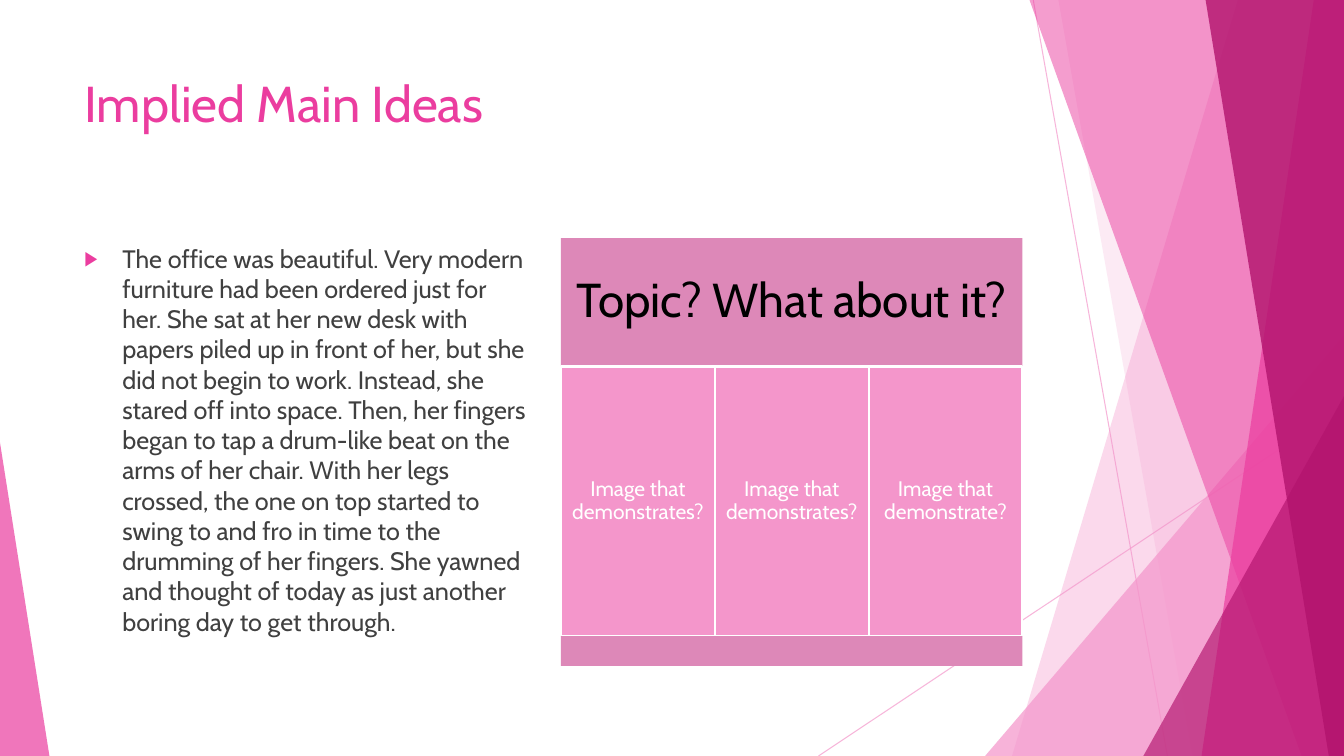
"""Build the slide on implied main ideas: a passage beside a topic-and-images table of boxes."""
import pptx
import pptx.util
import pptx.dml.color
import pptx.enum.shapes
import pptx.enum.text
import pptx.oxml
import pptx.oxml.ns
import lxml.etree

PINK, MAGENTA, PLUM, MAUVE = "F496CB", "EB3D9F", "B2136D", "DD88B8"
WHITE, BLACK, GREY = "FFFFFF", "000000", "404040"
FACE = "Cabin"
SHAPE = pptx.enum.shapes.MSO_SHAPE
ALIGN = pptx.enum.text.PP_ALIGN
ANCHOR = pptx.enum.text.MSO_ANCHOR
Pt = pptx.util.Pt
qn = pptx.oxml.ns.qn


def paint(fill, colour, opacity=100):
    fill.solid()
    fill.fore_color.rgb = pptx.dml.color.RGBColor.from_string(colour)
    if opacity < 100:
        tint = fill._xPr.find(qn("a:solidFill"))[0]
        lxml.etree.SubElement(tint, qn("a:alpha")).set("val", str(opacity * 1000))


def write(frame, text, size, colour, align=ALIGN.LEFT, anchor=ANCHOR.TOP,
          inset=(7.2, 3.6), spacing=None, before=None):
    frame.word_wrap = True
    frame.vertical_anchor = anchor
    frame.margin_left = frame.margin_right = Pt(inset[0])
    frame.margin_top = frame.margin_bottom = Pt(inset[1])
    paragraph = frame.paragraphs[0]
    paragraph.alignment = align
    paragraph.line_spacing = spacing
    if before is not None:
        paragraph.space_before = Pt(before)
    run = paragraph.add_run()
    run.text = text
    run.font.name = FACE
    run.font.size = Pt(size)
    paint(run.font.fill, colour)
    return paragraph


deck = pptx.Presentation()
deck.slide_width = pptx.util.Inches(13.33)
deck.slide_height = pptx.util.Inches(7.5)
slide = deck.slides.add_slide(deck.slide_layouts[6])
shapes = slide.shapes
col, row = deck.slide_width / 100, deck.slide_height / 100

for x1, y1, x2, y2 in [(76.88, 0, 86.86, 100), (100, 53.73, 60.9, 100)]:
    ray = shapes.add_connector(pptx.enum.shapes.MSO_CONNECTOR.STRAIGHT,
                               int(x1 * col), int(y1 * row), int(x2 * col), int(y2 * row))
    ray.line.width = Pt(0.75)
    paint(ray.line.fill, PINK, 70)
    lxml.etree.SubElement(ray._element.spPr, qn("a:effectLst"))

facets = [
    ("band", (92.1, 75.3), PINK, 36),
    ("band", (78.75, 88.73), PINK, 20),
    ("triangle", (73.3, 100, 44.4, 1), PINK, 72),
    ("band", (76.6, 96.85), MAGENTA, 50),
    ("band", (97.75, 89.4), MAGENTA, 70),
    ("band", (89.7, 98.87), PLUM, 80),
    ("triangle", (85.07, 100, 52.4, 1), PLUM, 66),
    ("triangle", (0, 3.68, 58.53, 0), MAGENTA, 70),
]
for kind, edges, colour, opacity in facets:
    if kind == "band":
        upper, lower = edges
        outline = shapes.build_freeform(int(upper * col), 0)
        outline.add_line_segments([(int(100 * col), 0), (int(100 * col), int(100 * row)),
                                   (int(lower * col), int(100 * row))])
        facet = outline.convert_to_shape()
    else:
        left, right, top, tip = edges
        facet = shapes.add_shape(SHAPE.ISOSCELES_TRIANGLE, int(left * col), int(top * row),
                                 int((right - left) * col), int((100 - top) * row))
        facet.adjustments[0] = tip
    paint(facet.fill, colour, opacity)
    facet.line.fill.background()
    facet.shadow.inherit = False

margin, panel_left, panel_top = int(5.55 * col), int(41.74 * col), int(31.5 * row)
panel_width, panel_height = int(34.33 * col), int(56.6 * row)

title = shapes.add_textbox(margin, int(8.93 * row), int(70.5 * col), int(19.2 * row))
write(title.text_frame, "Implied Main Ideas", 36, MAGENTA)

passage = shapes.add_textbox(margin, panel_top, panel_width, panel_height)
story = write(
    passage.text_frame,
    "The office was beautiful. Very modern furniture had been ordered just for her. "
    "She sat at her new desk with papers piled up in front of her, but she did not begin to work. "
    "Instead, she stared off into space. Then, her fingers began to tap a drum-like beat on the "
    "arms of her chair. With her legs crossed, the one on top started to swing to and fro in time "
    "to the drumming of her fingers. She yawned and thought of today as just another boring day "
    "to get through.", 18, GREY, before=10)
bullet = story._p.get_or_add_pPr()
bullet.set("marL", str(Pt(27)))
bullet.set("indent", str(-Pt(27)))
marker_colour = lxml.etree.SubElement(bullet, qn("a:buClr"))
lxml.etree.SubElement(marker_colour, qn("a:srgbClr")).set("val", MAGENTA)
lxml.etree.SubElement(bullet, qn("a:buSzPct")).set("val", "80000")
lxml.etree.SubElement(bullet, qn("a:buFont")).set("typeface", FACE)
lxml.etree.SubElement(bullet, qn("a:buChar")).set("char", "▶")

questions = ["Image that demonstrates?", "Image that demonstrates?", "Image that demonstrate?"]
third = 1 / len(questions)
boxes = [(0, 0, 1, 0.3, MAUVE, "Topic? What about it?", 34, BLACK, 10)]
boxes += [(i * third, 0.3, third, 0.63, PINK, question, 15, WHITE, 4.5)
          for i, question in enumerate(questions)]
boxes += [(0, 0.93, 1, 0.07, MAUVE, "", 15, WHITE, 4.5)]
for x, y, width, height, colour, text, size, ink, inset in boxes:
    box = shapes.add_shape(SHAPE.RECTANGLE, int(panel_left + x * panel_width),
                           int(panel_top + y * panel_height),
                           int(width * panel_width), int(height * panel_height))
    box.shadow.inherit = False
    paint(box.fill, colour)
    if colour == PINK:
        paint(box.line.fill, WHITE)
        box.line.width = Pt(1.5)
    else:
        box.line.fill.background()
    if text:
        write(box.text_frame, text, size, ink, align=ALIGN.CENTER, anchor=ANCHOR.MIDDLE,
              inset=(inset, inset), spacing=0.9)

deck.save("out.pptx")
